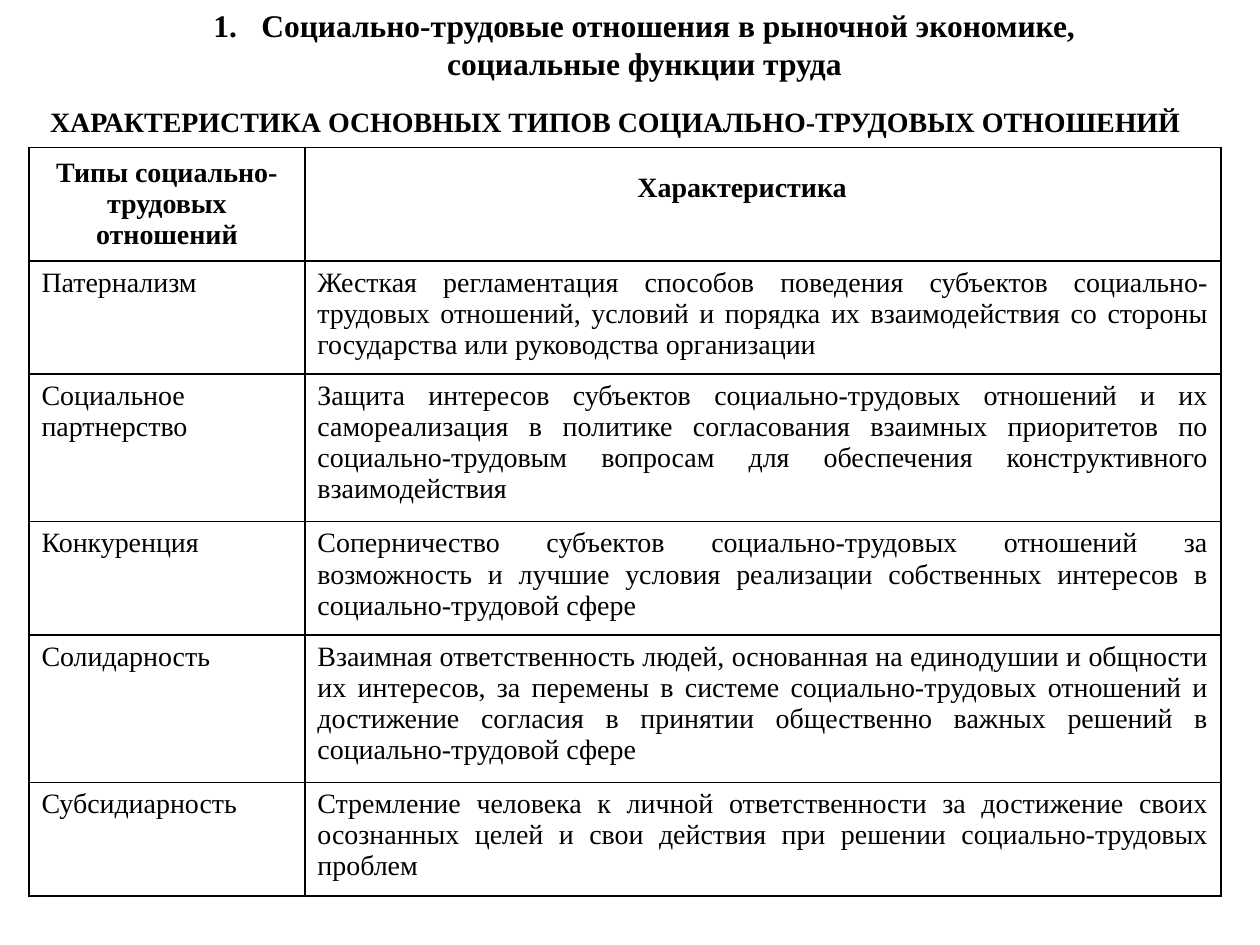
from lxml import etree
from pptx import Presentation
from pptx.dml.color import RGBColor
from pptx.enum.text import MSO_ANCHOR, PP_ALIGN
from pptx.oxml.ns import qn
from pptx.util import Inches, Pt

LEFT, MID, JUST = PP_ALIGN.LEFT, PP_ALIGN.CENTER, PP_ALIGN.JUSTIFY
TOP, CENTER = MSO_ANCHOR.TOP, MSO_ANCHOR.MIDDLE
FONT = "Times New Roman"
COLORS = {"ink": "000000", "paper": "FFFFFF"}
COLS = [2.19, 7.27]
ROWS = [0.9, 0.9, 1.17, 0.9, 1.17, 0.9]
HEADS = [["Типы социально-трудовых", "отношений"], ["Характеристика"]]
TYPES = [
    ("Патернализм",
     "Жесткая регламентация способов поведения субъектов социально-трудовых "
     "отношений, условий и порядка их взаимодействия со стороны государства "
     "или руководства организации"),
    ("Социальное партнерство",
     "Защита интересов субъектов социально-трудовых отношений и их "
     "самореализация в политике согласования взаимных приоритетов по "
     "социально-трудовым вопросам для обеспечения конструктивного "
     "взаимодействия"),
    ("Конкуренция",
     "Соперничество субъектов социально-трудовых отношений за возможность и "
     "лучшие условия реализации собственных интересов в социально-трудовой "
     "сфере"),
    ("Солидарность",
     "Взаимная ответственность людей, основанная на единодушии и общности их "
     "интересов, за перемены в системе социально-трудовых отношений и "
     "достижение согласия в принятии общественно важных решений в "
     "социально-трудовой сфере"),
    ("Субсидиарность",
     "Стремление человека к личной ответственности за достижение своих "
     "осознанных целей и свои действия при решении социально-трудовых проблем"),
]


def color(name):
    return RGBColor.from_string(COLORS[name])


def write(frame, lines, size, align, bold):
    for i, line in enumerate(lines):
        para = frame.paragraphs[0] if i == 0 else frame.add_paragraph()
        para.alignment = align
        run = para.add_run()
        run.text = line
        font = run.font
        font.name, font.size, font.bold = FONT, Pt(size), bold
        font.color.rgb = color("ink")


def add_text(slide, box, lines, size):
    frame = slide.shapes.add_textbox(*map(Inches, box)).text_frame
    frame.word_wrap = True
    write(frame, lines, size, MID, True)
    return frame


def number(frame):
    for para in frame.paragraphs:
        props = para._p.get_or_add_pPr()
        props.set("marL", str(Inches(0.38)))
        props.set("indent", str(Inches(-0.38)))
    first = frame.paragraphs[0]._p.get_or_add_pPr()
    etree.SubElement(first, qn("a:buFont"), typeface="+mj-lt")
    etree.SubElement(first, qn("a:buAutoNum"), type="arabicPeriod")


def add_border(cell):
    props = cell._tc.get_or_add_tcPr()
    for i, side in enumerate(("lnL", "lnR", "lnT", "lnB")):
        line = etree.Element(qn("a:" + side), w=str(Pt(1)))
        fill = etree.SubElement(line, qn("a:solidFill"))
        etree.SubElement(fill, qn("a:srgbClr"), val=COLORS["ink"])
        props.insert(i, line)


def fill_cell(cell, lines, align, bold=False, anchor=TOP):
    cell.fill.solid()
    cell.fill.fore_color.rgb = color("paper")
    cell.vertical_anchor = anchor
    write(cell.text_frame, lines, 16, align, bold)
    add_border(cell)


def add_grid(slide):
    box = map(Inches, (0.23, 1.17, sum(COLS), sum(ROWS)))
    table = slide.shapes.add_table(len(ROWS), len(COLS), *box).table
    for col, width in zip(table.columns, COLS):
        col.width = Inches(width)
    for row, height in zip(table.rows, ROWS):
        row.height = Inches(height)
    for i, lines in enumerate(HEADS):
        fill_cell(table.cell(0, i), lines, MID, True, CENTER)
    head = table.cell(0, 1)
    head.margin_right, head.margin_bottom = Inches(0.43), Inches(0.3)
    for i, (name, text) in enumerate(TYPES, 1):
        fill_cell(table.cell(i, 0), [name], LEFT)
        fill_cell(table.cell(i, 1), [text], JUST)


def main():
    deck = Presentation()
    deck.slide_width, deck.slide_height = Inches(10), Inches(7.5)
    slide = deck.slides.add_slide(deck.slide_layouts[6])
    title = add_text(slide, (0.23, 0, 9.77, 0.71), [
        "Социально-трудовые отношения в рыночной экономике,",
        "социальные функции труда"], 18)
    number(title)
    add_text(slide, (0, 0.78, 9.77, 0.37), [
        "ХАРАКТЕРИСТИКА ОСНОВНЫХ ТИПОВ СОЦИАЛЬНО-ТРУДОВЫХ ОТНОШЕНИЙ"], 16)
    add_grid(slide)
    deck.save("out.pptx")


if __name__ == "__main__":
    main()
